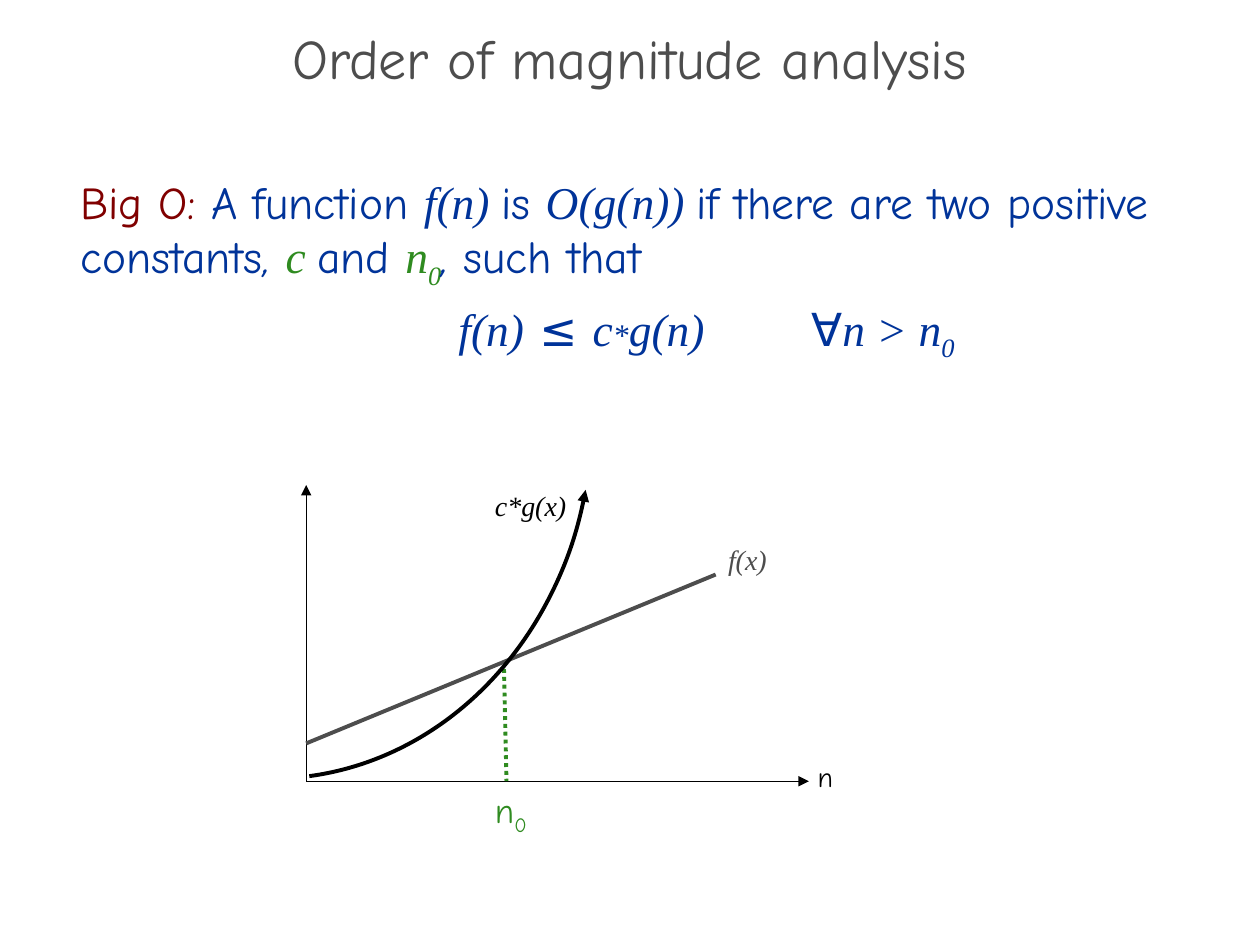
from dataclasses import dataclass

from pptx import Presentation
from pptx import util as u
from pptx.dml.color import RGBColor
from pptx.enum import dml, shapes, text
from pptx.oxml import ns
from lxml import etree


@dataclass(frozen=True)
class Theme:
    sans: str = "Comic Neue"
    serif: str = "Times New Roman"
    gray: str = "4D4D4D"
    red: str = "800000"
    blue: str = "003399"
    green: str = "2F8B20"
    black: str = "000000"
    title: int = 32
    body: int = 26
    star: int = 18
    mark: int = 20
    label: int = 16
    thin: float = 0.75
    thick: float = 2.25


T = Theme()
W, H = u.Inches(10), u.Inches(7.5)
ORIGIN = (24.3, 82.67)


def X(share):
    return round(W * share / 100)


def Y(share):
    return round(H * share / 100)


def sub(parent, tag, **attrs):
    return etree.SubElement(parent, ns.qn(tag), attrs)


def prose(words, color=T.blue, size=T.body, italic=False):
    return words, T.sans, size, color, italic, False


def math(words, color=T.blue, size=T.body, low=False):
    return words, T.serif, size, color, True, low


def index(size, color):
    return "0", T.sans, size, color, False, True


def write(p, runs):
    for words, face, size, color, italic, low in runs:
        r = p.add_run()
        r.text = words
        r.font.name, r.font.size, r.font.italic = face, u.Pt(size), italic
        r.font.color.rgb = RGBColor.from_string(color)
        if low:
            r.font._element.set("baseline", "-25000")


def add_text(s, x, y, w, h, runs, wrap=False):
    tf = s.shapes.add_textbox(X(x), Y(y), X(w), Y(h)).text_frame
    tf.word_wrap = wrap
    if not wrap:
        tf.auto_size = text.MSO_AUTO_SIZE.SHAPE_TO_FIT_TEXT
    write(tf.paragraphs[0], runs)
    return tf


def style_line(sp, color, width, dash=None, arrow=False):
    sp.line.color.rgb = RGBColor.from_string(color)
    sp.line.width = u.Pt(width)
    if dash:
        sp.line.dash_style = dash
    if arrow:
        sub(sp.line._get_or_add_ln(), "a:tailEnd", type="triangle")


def add_line(s, start, end, color, width, **style):
    sp = s.shapes.add_connector(shapes.MSO_CONNECTOR.STRAIGHT,
                                X(start[0]), Y(start[1]), X(end[0]), Y(end[1]))
    style_line(sp, color, width, **style)
    sub(sp.element.spPr, "a:effectLst")


def add_curve(s, x, y, w, h, degrees):
    sp = s.shapes.add_shape(shapes.MSO_SHAPE.ARC, X(x), Y(y), X(w), Y(h))
    sp.shadow.inherit = False
    sp.fill.background()
    for i, angle in enumerate(degrees):
        sp.adjustments[i] = angle * 0.6
    sp.element.spPr.xfrm.set("flipV", "1")
    style_line(sp, T.black, T.thick, arrow=True)


def add_title(s):
    tf = add_text(s, 0, 3.6, 100, 6.67,
                  [prose("Order of magnitude analysis", T.gray, T.title)], wrap=True)
    tf.vertical_anchor = text.MSO_ANCHOR.MIDDLE
    p = tf.paragraphs[0]
    p.alignment = text.PP_ALIGN.CENTER
    p.line_spacing = 0.7


def add_definition(s):
    tf = add_text(s, 5.4, 17.73, 91.7, 75.6, [
        prose("Big O:", T.red), prose(" A function "), math("f(n) "),
        prose("is "), math("O(g(n)) "),
        prose("if there are two positive constants"), prose(", ", italic=True),
        math("c ", T.green), prose("and "),
        math("n", T.green), math("0", T.green, low=True),
        prose(", ", italic=True), prose("such that")], wrap=True)
    formula = tf.add_paragraph()
    write(formula, [
        math("\tf(n)"), prose(" ≤ ", italic=True), math("c"),
        math("*", size=T.star), math("g(n)"), prose("\t∀"),
        math("n > n"), math("0", low=True)])
    for p in tf.paragraphs:
        p.space_after = u.Pt(6)
    tabs = sub(formula._p.get_or_add_pPr(), "a:tabLst")
    for stop in (30, 58):
        sub(tabs, "a:tab", pos=str(X(stop)), algn="l")


def add_graph(s):
    for tip in ((ORIGIN[0], 51.33), (64.2, ORIGIN[1])):
        add_line(s, ORIGIN, tip, T.black, T.thin, arrow=True)
    add_line(s, (ORIGIN[0], 78.67), (56.8, 60.8), T.gray, T.thick)
    add_text(s, 38.3, 51.07, 7.8, 4.93, [math("c*g(x)", T.black, T.label)])
    add_text(s, 56.8, 56.8, 6.6, 6.67, [math("f(x)", T.gray, T.label)])
    add_text(s, 63.9, 79.73, 3.2, 4.93, [prose("n", T.black, T.label)])
    add_line(s, (40, 70.8), (40.2, ORIGIN[1]), T.green, T.thick,
             dash=dml.MSO_LINE.ROUND_DOT)
    add_text(s, 38.3, 82.8, 4.6, 5.87,
             [prose("n", T.green, T.mark), index(T.mark, T.green)])
    add_curve(s, -3.9, 5.87, 50.9, 76.53, (276.01, 346.95))


def main():
    prs = Presentation()
    prs.slide_width, prs.slide_height = W, H
    s = prs.slides.add_slide(prs.slide_layouts[6])
    add_title(s)
    add_definition(s)
    add_graph(s)
    prs.save("out.pptx")


if __name__ == "__main__":
    main()
